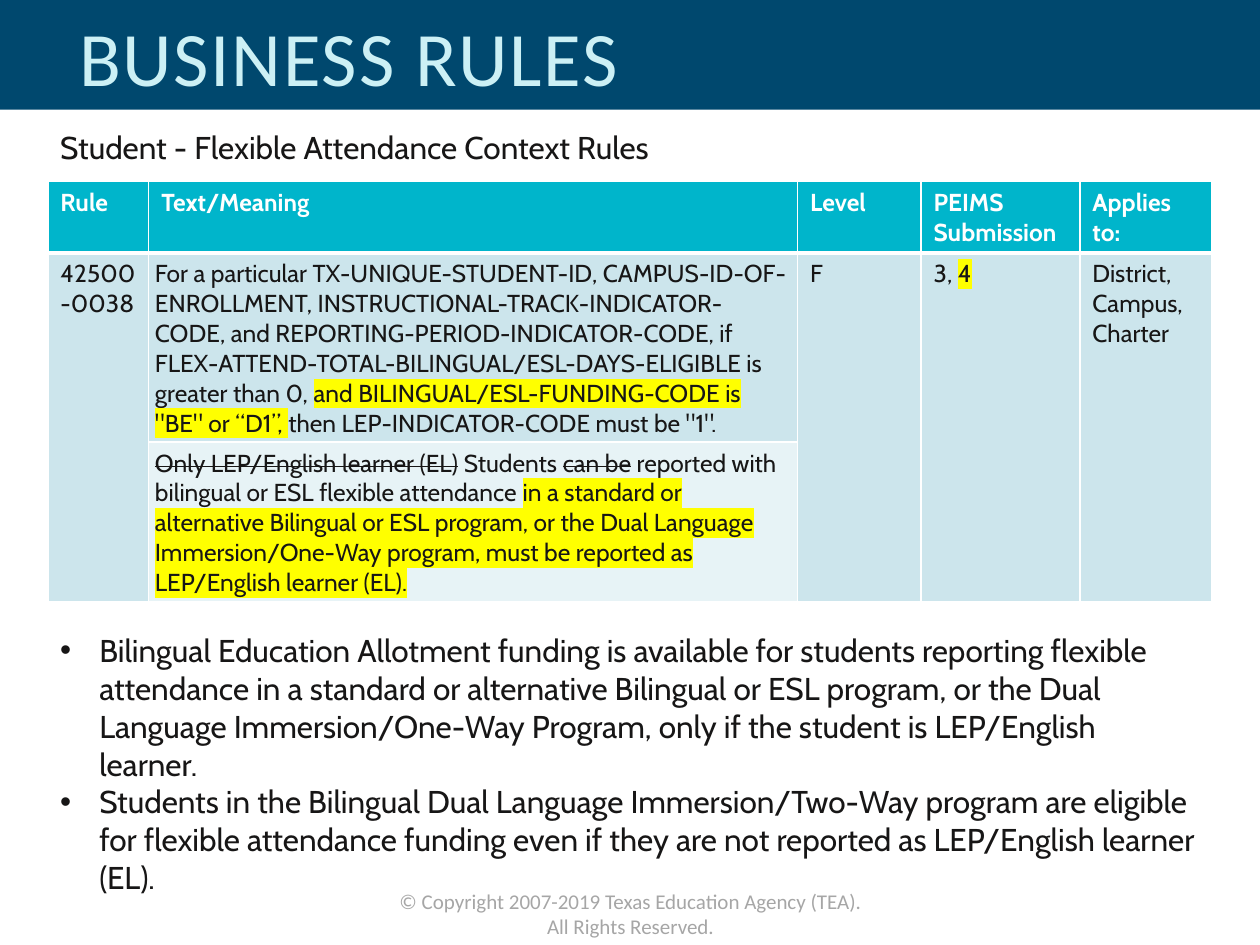
import pptx
import pptx.util
import pptx.dml.color
import pptx.enum.shapes
import pptx.enum.text
import pptx.oxml
import pptx.oxml.ns
import lxml.etree

Inches = pptx.util.Inches
Pt = pptx.util.Pt
RGBColor = pptx.dml.color.RGBColor
qn = pptx.oxml.ns.qn

NAVY = RGBColor(0x00, 0x48, 0x6E)
PALE = RGBColor(0xCC, 0xF0, 0xF5)
TEAL = RGBColor(0x00, 0xB5, 0xCB)
BAND = RGBColor(0xCC, 0xE5, 0xEC)
LIGHT = RGBColor(0xE7, 0xF3, 0xF6)
INK = RGBColor(0x17, 0x16, 0x16)
GREY = RGBColor(0xA6, 0xA6, 0xA6)
WHITE = RGBColor(0xFF, 0xFF, 0xFF)
YELLOW = RGBColor(0xFF, 0xFF, 0x00)

prs = pptx.Presentation()
prs.slide_width = Inches(10)
prs.slide_height = Inches(7.5)
s = prs.slides.add_slide(prs.slide_layouts[6])


def style(p, size, face, color, bold=False):
    for r in p.runs:
        r.font.size = Pt(size)
        r.font.name = face
        r.font.bold = bold
        r.font.color.rgb = color


def add_text(box, lines, size, face, color):
    sp = s.shapes.add_textbox(*[Inches(v) for v in box])
    tf = sp.text_frame
    tf.word_wrap = True
    tf.auto_size = pptx.enum.text.MSO_AUTO_SIZE.SHAPE_TO_FIT_TEXT
    tf.text = "\n".join(lines)
    for p in tf.paragraphs:
        style(p, size, face, color)
    return tf


banner = s.shapes.add_shape(
    pptx.enum.shapes.MSO_SHAPE.RECTANGLE, 0, 0, Inches(10), Inches(0.87))
banner.shadow.inherit = False
banner.fill.solid()
banner.fill.fore_color.rgb = NAVY
banner.line.fill.background()

footer = add_text(
    (3.04, 7, 3.93, 0.3),
    ["© Copyright 2007-2019 Texas Education Agency (TEA). All Rights Reserved."],
    12, "Calibri", GREY)
footer.paragraphs[0].alignment = pptx.enum.text.PP_ALIGN.CENTER

title = add_text((0.53, 0.05, 8.28, 0.87), ["BUSINESS RULES"], 44, "Calibri", PALE)
title.auto_size = pptx.enum.text.MSO_AUTO_SIZE.NONE
title.vertical_anchor = pptx.enum.text.MSO_ANCHOR.MIDDLE
title.paragraphs[0].line_spacing = 0.9
title.paragraphs[0].runs[0].font._element.set("spc", "100")

cells = [
    ["Rule", "Text/Meaning", "Level", "PEIMS\nSubmission", "Applies to:"],
    ["42500-0038",
     [("For a particular TX-UNIQUE-STUDENT-ID, CAMPUS-ID-OF-ENROLLMENT, "
       "INSTRUCTIONAL-TRACK-INDICATOR-CODE, and REPORTING-PERIOD-INDICATOR-CODE, "
       "if FLEX-ATTEND-TOTAL-BILINGUAL/ESL-DAYS-ELIGIBLE is greater than 0, ", ""),
      ("and BILINGUAL/ESL-FUNDING-CODE is \"BE\" or “D1”, ", "highlight"),
      ("then LEP-INDICATOR-CODE must be \"1\".", "")],
     "F",
     [("3, ", ""), ("4", "highlight")],
     "District,\nCampus,\nCharter"],
    ["",
     [("Only LEP/English learner (EL)", "strike"),
      (" Students ", ""),
      ("can be", "strike"),
      (" reported with bilingual or ESL flexible attendance ", ""),
      ("in a standard or alternative Bilingual or ESL program, or the Dual Language "
       "Immersion/One-Way program, must be reported as LEP/English learner (EL).",
       "highlight")],
     "", "", ""],
]
tbl = s.shapes.add_table(
    3, 5, Inches(0.38), Inches(1.44), Inches(9.23), Inches(3.1)).table
tbl.first_row = False
tbl.horz_banding = False
for col, width in zip(tbl.columns, [0.8, 5.15, 0.98, 1.26, 1.05]):
    col.width = Inches(width)
for row in tbl.rows:
    row.height = Inches(0.41)
for c in (0, 2, 3, 4):
    tbl.cell(1, c).merge(tbl.cell(2, c))

for i, row in enumerate(cells):
    for j, content in enumerate(row):
        cell = tbl.cell(i, j)
        cell.fill.solid()
        cell.fill.fore_color.rgb = LIGHT if (i, j) == (2, 1) else (TEAL, BAND, BAND)[i]
        if i and j == 1:
            cell.margin_left = cell.margin_right = Inches(0.05)
        tcPr = cell._tc.get_or_add_tcPr()
        for n, side in enumerate(("lnL", "lnR", "lnT", "lnB")):
            thick = (i == 0 and side == "lnB") or (i == 1 and side == "lnT")
            ln = lxml.etree.Element(qn("a:" + side), w=str(Pt(3 if thick else 1)))
            fill = lxml.etree.SubElement(ln, qn("a:solidFill"))
            lxml.etree.SubElement(fill, qn("a:srgbClr"), val=str(WHITE))
            tcPr.insert(n, ln)
        tf = cell.text_frame
        if isinstance(content, str):
            tf.text = content
        else:
            for text, mark in content:
                tf.paragraphs[0].add_run().text = text
        for p in tf.paragraphs:
            style(p, 14, "Cabin", INK if i else WHITE, bold=i == 0)
        if isinstance(content, list):
            for r, (text, mark) in zip(tf.paragraphs[0].runs, content):
                rPr = r.font._element
                if mark == "strike":
                    rPr.set("strike", "sngStrike")
                elif mark == "highlight":
                    hl = lxml.etree.Element(qn("a:highlight"))
                    lxml.etree.SubElement(hl, qn("a:srgbClr"), val=str(YELLOW))
                    rPr.find(qn("a:latin")).addprevious(hl)

add_text((0.38, 0.97, 8.2, 0.4), ["Student - Flexible Attendance Context Rules"],
         18, "Cabin", INK)

notes = add_text((0.38, 4.96, 9.23, 1.62), [
    "Bilingual Education Allotment funding is available for students reporting "
    "flexible attendance in a standard or alternative Bilingual or ESL program, or "
    "the Dual Language Immersion/One-Way Program, only if the student is "
    "LEP/English learner.",
    "Students in the Bilingual Dual Language Immersion/Two-Way program are eligible "
    "for flexible attendance funding even if they are not reported as LEP/English "
    "learner (EL).",
], 18, "Cabin", INK)
for p in notes.paragraphs:
    pPr = p._p.get_or_add_pPr()
    pPr.set("marL", str(Inches(0.31)))
    pPr.set("indent", str(Inches(-0.31)))
    lxml.etree.SubElement(pPr, qn("a:buFont"), typeface="Arial")
    lxml.etree.SubElement(pPr, qn("a:buChar"), char="•")

prs.save("out.pptx")
